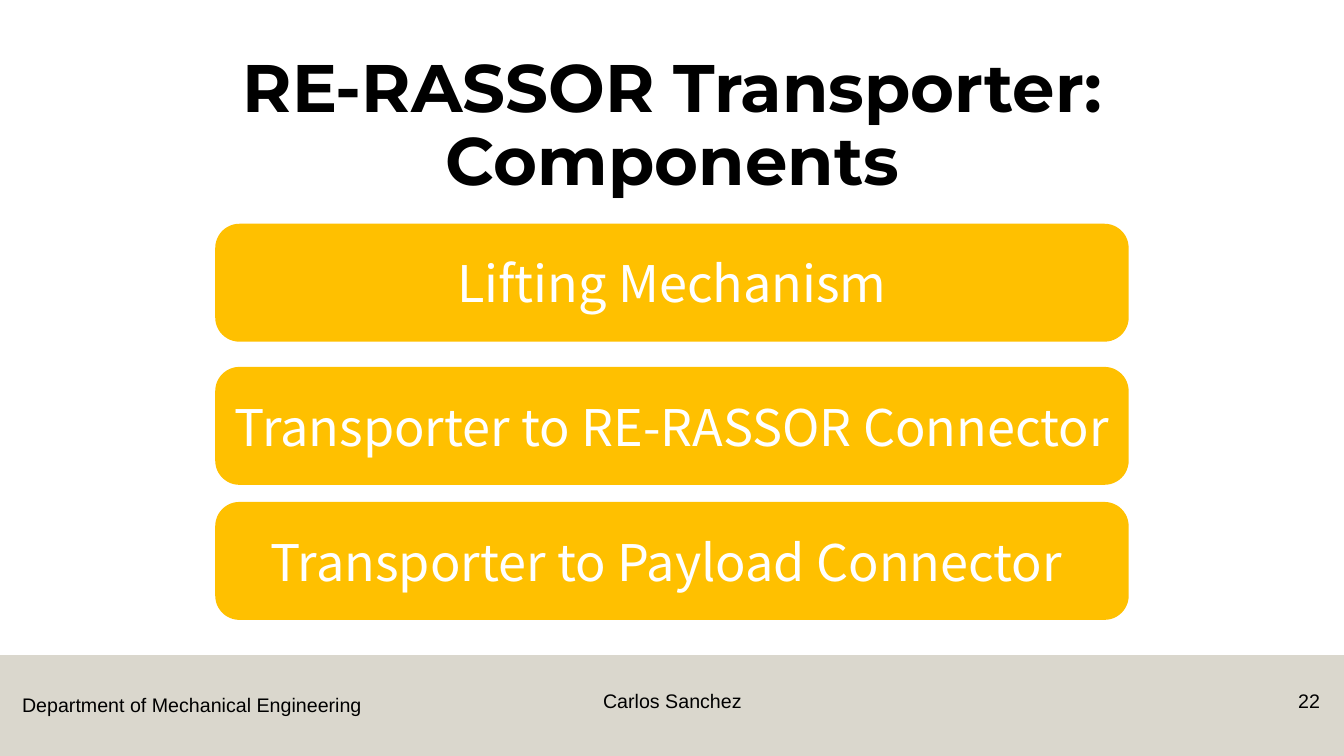
"""Build the RE-RASSOR Transporter components slide."""
from dataclasses import dataclass

from lxml import etree
from pptx import Presentation
from pptx.dml.color import RGBColor
from pptx.enum.shapes import MSO_SHAPE
from pptx.enum.text import MSO_ANCHOR, PP_ALIGN
from pptx.oxml.ns import qn
from pptx.util import Inches, Pt

RECTANGLE, ROUNDED = MSO_SHAPE.RECTANGLE, MSO_SHAPE.ROUNDED_RECTANGLE
LEFT, CENTER, RIGHT = PP_ALIGN.LEFT, PP_ALIGN.CENTER, PP_ALIGN.RIGHT
TOP, MIDDLE = MSO_ANCHOR.TOP, MSO_ANCHOR.MIDDLE

TITLE = "RE-RASSOR Transporter: Components"
COMPONENTS = [
    ("Lifting Mechanism", 2.22),
    ("Transporter to RE-RASSOR Connector", 3.64),
    ("Transporter to Payload Connector ", 4.98),
]
FOOTERS = [
    ("Department of Mechanical Engineering", (0.12, 6.83, 3.59, 0.34), LEFT, False),
    ("Carlos Sanchez", (4.42, 6.79, 4.5, 0.4), CENTER, True),
    ("22", (12.42, 6.79, 0.77, 0.4), RIGHT, True),
]
SLIDE_WIDTH, SLIDE_HEIGHT = 13.33, 7.5
BAND_HEIGHT = 1
BAND_OPACITY = 50
CARD_WIDTH, CARD_HEIGHT, CARD_ROUNDING = 9.06, 1.17, 0.205


@dataclass(frozen=True)
class Style:
    font: str
    size: int
    color: str
    bold: bool = False


@dataclass(frozen=True)
class Theme:
    card: str = "FFC000"
    band: str = "B7B09C"
    title: Style = Style("Montserrat", 48, "000000", True)
    label: Style = Style("Noto Sans CJK JP", 36, "FFFFFF")
    footer: Style = Style("Arial", 14, "000000")


THEME = Theme()


def write(shape, text, style, alignment, anchor=TOP, wrap=True):
    frame = shape.text_frame
    frame.word_wrap = wrap
    frame.vertical_anchor = anchor
    paragraph = frame.paragraphs[0]
    paragraph.text = text
    paragraph.alignment = alignment
    font = paragraph.font
    font.name, font.size, font.bold = style.font, Pt(style.size), style.bold
    font.color.rgb = RGBColor.from_string(style.color)
    return paragraph


def add_text(slide, box, text, style, alignment, wrap=True):
    shape = slide.shapes.add_textbox(*map(Inches, box))
    return write(shape, text, style, alignment, wrap=wrap)


def add_block(slide, kind, box, color):
    shape = slide.shapes.add_shape(kind, *map(Inches, box))
    shape.shadow.inherit = False
    shape.fill.solid()
    shape.fill.fore_color.rgb = RGBColor.from_string(color)
    shape.line.fill.background()
    return shape


def add_band(slide):
    box = (0, SLIDE_HEIGHT - BAND_HEIGHT, SLIDE_WIDTH, BAND_HEIGHT)
    band = add_block(slide, RECTANGLE, box, THEME.band)
    color = band._element.spPr.find(qn("a:solidFill")).find(qn("a:srgbClr"))
    etree.SubElement(color, qn("a:alpha")).set("val", str(BAND_OPACITY * 1000))


def main():
    presentation = Presentation()
    presentation.slide_width = Inches(SLIDE_WIDTH)
    presentation.slide_height = Inches(SLIDE_HEIGHT)
    slide = presentation.slides.add_slide(presentation.slide_layouts[6])

    add_band(slide)
    for text, box, alignment, wrap in FOOTERS:
        add_text(slide, box, text, THEME.footer, alignment, wrap)

    card_left = (SLIDE_WIDTH - CARD_WIDTH) / 2
    for text, top in COMPONENTS:
        box = (card_left, top, CARD_WIDTH, CARD_HEIGHT)
        card = add_block(slide, ROUNDED, box, THEME.card)
        card.adjustments[0] = CARD_ROUNDING
        write(card, text, THEME.label, CENTER, MIDDLE)

    title = add_text(slide, (0.92, 0.49, 11.5, 1.09), TITLE, THEME.title, CENTER)
    title.line_spacing = 0.9
    presentation.save("out.pptx")


if __name__ == "__main__":
    main()
